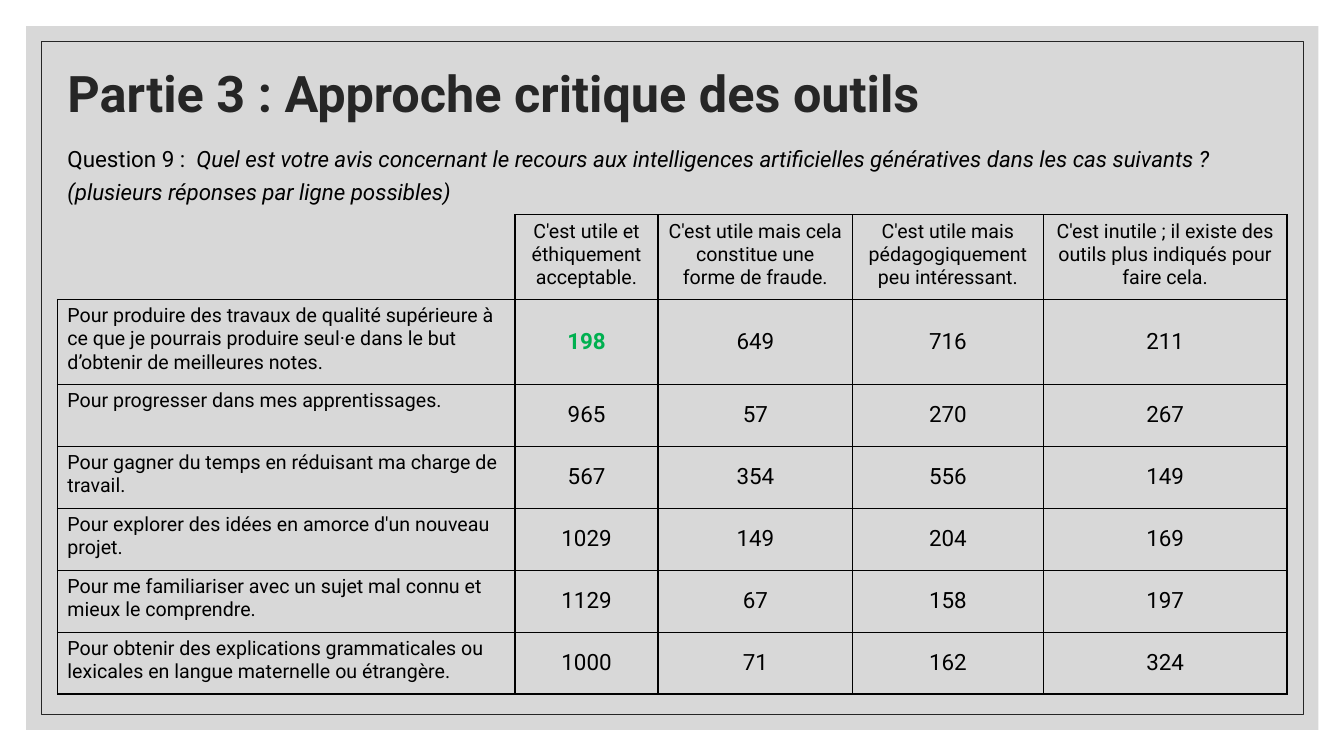
from dataclasses import dataclass

from lxml.etree import SubElement
from pptx import Presentation
from pptx.dml.color import RGBColor as RGB
from pptx.enum.shapes import MSO_SHAPE as SHAPE
from pptx.enum.text import MSO_ANCHOR as ANCHOR, MSO_AUTO_SIZE as AUTO, PP_ALIGN as ALIGN
from pptx.oxml.ns import qn
from pptx.util import Pt


@dataclass(frozen=True)
class Theme:
    font: str = "Roboto"
    panel: str = "BFBFBF"
    panel_alpha: int = 60
    dark: str = "262626"
    text: str = "000000"
    highlight: str = "00B050"
    title_size: int = 36
    body_size: int = 16
    label_size: int = 14
    frame_width: float = 0.5
    border_width: float = 1


HEADERS = [
    "C'est utile et éthiquement acceptable.",
    "C'est utile mais cela constitue une forme de fraude.",
    "C'est utile mais pédagogiquement peu intéressant.",
    "C'est inutile ; il existe des outils plus indiqués pour faire cela.",
]
ANSWERS = [
    ("Pour produire des travaux de qualité supérieure à ce que je pourrais produire "
     "seul·e dans le but d’obtenir de meilleures notes.", 198, 649, 716, 211),
    ("Pour progresser dans mes apprentissages.", 965, 57, 270, 267),
    ("Pour gagner du temps en réduisant ma charge de travail.", 567, 354, 556, 149),
    ("Pour explorer des idées en amorce d'un nouveau projet.", 1029, 149, 204, 169),
    ("Pour me familiariser avec un sujet mal connu et mieux le comprendre.",
     1129, 67, 158, 197),
    ("Pour obtenir des explications grammaticales ou lexicales en langue maternelle "
     "ou étrangère.", 1000, 71, 162, 324),
]
HIGHLIGHTED = (1, 1)
COL_WIDTHS = [326.9, 102.2, 139, 136.1, 174.2]
ROW_HEIGHTS = [60.5] * 2 + [44.3] * 5


def write(p, text, *, font, size, color, bold=False, italic=False, align=ALIGN.LEFT):
    """Add a formatted run to a paragraph."""
    p.alignment = align
    r = p.add_run()
    r.text = text
    r.font.name, r.font.size = font, Pt(size)
    r.font.bold, r.font.italic = bold, italic
    r.font.color.rgb = RGB.from_string(color)


class SlideBuilder:
    def __init__(self, s, theme):
        self.s, self.theme = s, theme

    def rect(self, x, y, w, h, fill=None, alpha=100, line=None):
        sp = self.s.shapes.add_shape(SHAPE.RECTANGLE, Pt(x), Pt(y), Pt(w), Pt(h))
        sp.shadow.inherit = False
        if fill:
            sp.fill.solid()
            sp.fill.fore_color.rgb = RGB.from_string(fill)
            color = sp.element.spPr.find(".//" + qn("a:srgbClr"))
            SubElement(color, qn("a:alpha"), val=str(alpha * 1000))
        else:
            sp.fill.background()
        if line:
            sp.line.color.rgb = RGB.from_string(line)
            sp.line.width = Pt(self.theme.frame_width)
        else:
            sp.line.fill.background()

    def placeholder(self, sp, x, y, w, h, anchor):
        """Place a placeholder above the backdrop and return its first paragraph."""
        sp.element.getparent().append(sp.element)
        sp.left, sp.top, sp.width, sp.height = Pt(x), Pt(y), Pt(w), Pt(h)
        tf = sp.text_frame
        tf.word_wrap, tf.auto_size, tf.vertical_anchor = True, AUTO.NONE, anchor
        return tf.paragraphs[0]

    def title(self, text, *box):
        t = self.theme
        p = self.placeholder(self.s.shapes.title, *box, ANCHOR.MIDDLE)
        p.line_spacing = 0.9
        write(p, text, font=t.font, size=t.title_size, color=t.dark, bold=True)

    def question(self, label, text, *box):
        t = self.theme
        p = self.placeholder(self.s.placeholders[1], *box, ANCHOR.TOP)
        p.line_spacing, p.space_before = 1.2, Pt(9)
        pPr = p._p.get_or_add_pPr()
        pPr.set("marL", "0")
        pPr.set("indent", "0")
        SubElement(pPr, qn("a:buNone"))
        for part, italic in ((label, False), (text, True)):
            write(p, part, font=t.font, size=t.body_size, color=t.text, italic=italic)

    def borders(self, cell, sides):
        tcPr = cell._tc.get_or_add_tcPr()
        for side in "LRTB":
            ln = SubElement(tcPr, qn("a:ln" + side), w=str(Pt(self.theme.border_width)))
            if side in sides:
                fill = SubElement(ln, qn("a:solidFill"))
                SubElement(fill, qn("a:srgbClr"), val=self.theme.text)
            else:
                SubElement(ln, qn("a:noFill"))

    def table(self, rows, x, y):
        t = self.theme
        table = self.s.shapes.add_table(
            len(rows), len(COL_WIDTHS), Pt(x), Pt(y),
            Pt(sum(COL_WIDTHS)), Pt(sum(ROW_HEIGHTS))).table
        table.first_row = table.horz_banding = False
        for col, width in zip(table.columns, COL_WIDTHS):
            col.width = Pt(width)
        for row, height in zip(table.rows, ROW_HEIGHTS):
            row.height = Pt(height)
        for i, values in enumerate(rows):
            for j, value in enumerate(values):
                cell = table.cell(i, j)
                self.borders(cell, "LRTB" if i or j else "RB")
                cell.fill.background()
                if value == "":
                    continue
                number, marked = isinstance(value, int), (i, j) == HIGHLIGHTED
                cell.vertical_anchor = ANCHOR.MIDDLE if number else ANCHOR.TOP
                write(cell.text_frame.paragraphs[0], str(value), font=t.font,
                      size=t.body_size if number else t.label_size,
                      color=t.highlight if marked else t.text, bold=marked,
                      align=ALIGN.CENTER if j else ALIGN.LEFT)


def main():
    prs = Presentation()
    prs.slide_width, prs.slide_height = Pt(960), Pt(540)
    theme = Theme()
    slide = SlideBuilder(prs.slides.add_slide(prs.slide_layouts[1]), theme)

    # Backdrop
    slide.rect(18.7, 18.7, 923, 502.6, fill=theme.panel, alpha=theme.panel_alpha)
    slide.rect(29.5, 29.5, 901.4, 481, line=theme.dark)

    # Title and question
    slide.title("Partie 3 : Approche critique des outils", 41, 14.4, 792, 108)
    slide.question(
        "Question 9 : ",
        " Quel est votre avis concernant le recours aux intelligences artificielles "
        "génératives dans les cas suivants ? (plusieurs réponses par ligne possibles)",
        41, 96.5, 835.2, 303.1)

    # Answers
    slide.table([("", *HEADERS), *ANSWERS], 41, 153.4)

    prs.save("out.pptx")


if __name__ == "__main__":
    main()
